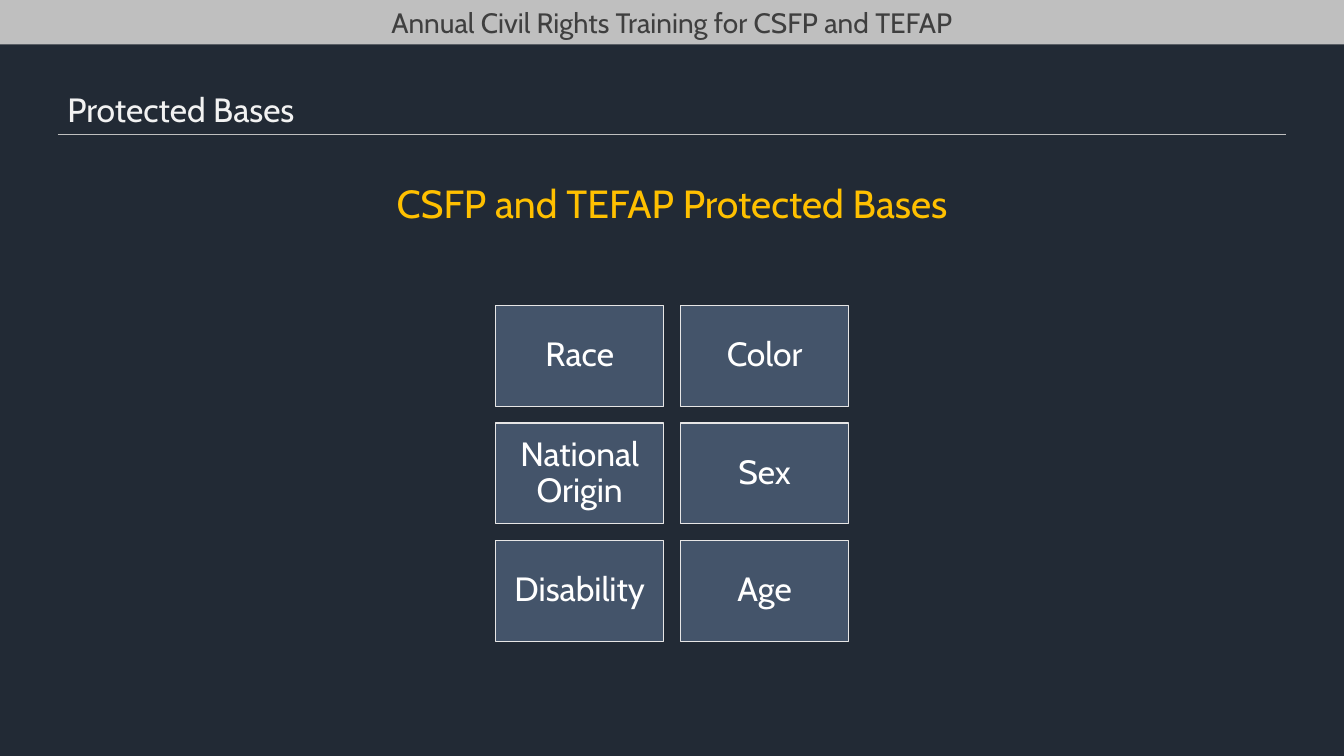
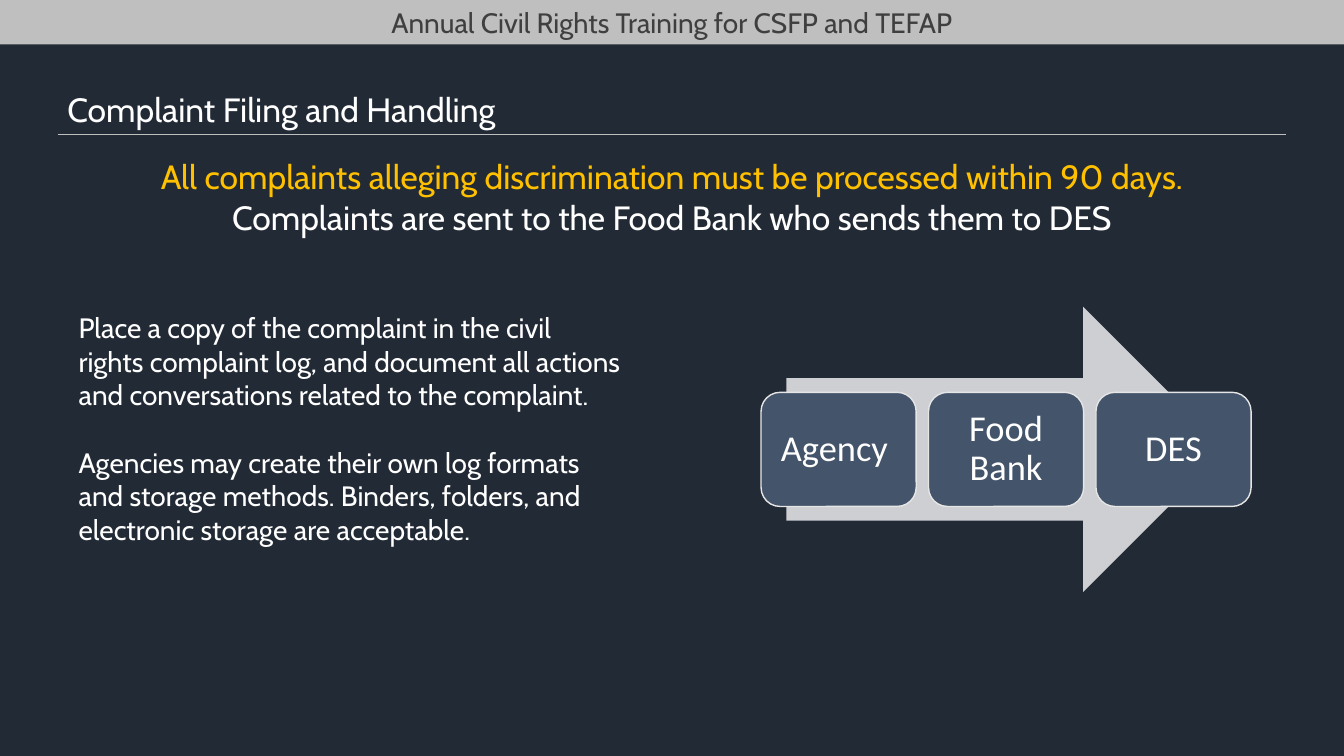
"""Build two training slides on protected bases and complaint handling."""
import pptx
import pptx.dml.color
import pptx.enum.shapes
import pptx.enum.text
import pptx.oxml
import pptx.util

Cm = pptx.util.Cm
Pt = pptx.util.Pt
RGBColor = pptx.dml.color.RGBColor
Shape = pptx.enum.shapes.MSO_SHAPE
Align = pptx.enum.text.PP_ALIGN
Anchor = pptx.enum.text.MSO_ANCHOR

NAVY = RGBColor(0x22, 0x2A, 0x35)
SLATE = RGBColor(0x44, 0x54, 0x6A)
SILVER = RGBColor(0xBF, 0xBF, 0xBF)
MIST = RGBColor(0xCD, 0xCF, 0xD3)
PEARL = RGBColor(0xE7, 0xE6, 0xE6)
CHARCOAL = RGBColor(0x3F, 0x3F, 0x3F)
GOLD = RGBColor(0xFF, 0xC0, 0x00)
WHITE = RGBColor(0xFF, 0xFF, 0xFF)
OFF_WHITE = RGBColor(0xF2, 0xF2, 0xF2)

SLIDE_WIDTH, SLIDE_HEIGHT = 33.87, 19.05
MARGIN = 1.45
CONTENT_WIDTH = SLIDE_WIDTH - 2 * MARGIN
COURSE = "Annual Civil Rights Training for CSFP and TEFAP"
FONT = "Cabin"


def apply(target, formats):
    """Set each attribute named in a dict of format values."""
    for name, value in formats.items():
        setattr(target, name, value)


def place(shape, box):
    """Move a shape to a box given as left, top, width, height in cm."""
    names = ("left", "top", "width", "height")
    apply(shape, {name: Cm(length) for name, length in zip(names, box)})


def write(shape, lines, size, align, font=FONT, anchor=Anchor.TOP,
          inset=(0.25, 0.13), spacing=1.0, gap=0):
    """Fill a shape with one paragraph for each pair of text and colour."""
    frame = shape.text_frame
    across, down = map(Cm, inset)
    apply(frame, {
        "word_wrap": True, "auto_size": pptx.enum.text.MSO_AUTO_SIZE.NONE,
        "vertical_anchor": anchor, "margin_left": across,
        "margin_right": across, "margin_top": down, "margin_bottom": down,
    })
    for index, (text, color) in enumerate(lines):
        para = frame.add_paragraph() if index else frame.paragraphs[0]
        apply(para, {"alignment": align, "line_spacing": spacing,
                     "space_before": Pt(gap if index else 0)})
        span = para.add_run()
        span.text = text
        apply(span.font, {"name": font, "size": Pt(size)})
        span.font.color.rgb = color


def add_block(page, kind, box, fill, line=None):
    """Add a flat preset shape with an optional outline."""
    block = page.shapes.add_shape(kind, *map(Cm, box))
    block.shadow.inherit = False
    block.fill.solid()
    block.fill.fore_color.rgb = fill
    if line is None:
        block.line.fill.background()
    else:
        block.line.color.rgb = line
        block.line.width = Pt(1)
    return block


def add_page(deck, layout, title, color):
    """Add a slide with the course band, its title and the rule below."""
    page = deck.slides.add_slide(deck.slide_layouts.get_by_name(layout))
    band = add_block(page, Shape.RECTANGLE, (0, 0, SLIDE_WIDTH, 1.12), SILVER)
    write(band, [(COURSE, CHARCOAL)], 20, Align.CENTER, anchor=Anchor.MIDDLE)
    place(page.shapes.title, (MARGIN, 2.11, CONTENT_WIDTH, 1.28))
    write(page.shapes.title, [(title, color)], 24, Align.LEFT)
    rule = page.shapes.add_connector(
        pptx.enum.shapes.MSO_CONNECTOR.STRAIGHT,
        Cm(MARGIN), Cm(3.4), Cm(SLIDE_WIDTH - MARGIN), Cm(3.4))
    rule.line.color.rgb = SILVER
    rule.line.width = Pt(0.75)
    pptx.oxml.ns
    properties = rule._element.spPr
    properties.append(pptx.oxml.parse_xml(
        '<a:effectLst xmlns:a='
        '"http://schemas.openxmlformats.org/drawingml/2006/main"/>'))
    return page


def add_headline(page, box, lines, size):
    """Add the centred statement under the title."""
    headline = page.shapes.add_textbox(*map(Cm, box))
    write(headline, lines, size, Align.CENTER)


def add_body(page, box, texts):
    """Fill the body placeholder with unbulleted paragraphs."""
    body = page.placeholders[1]
    place(body, box)
    write(body, [(text, WHITE) for text in texts], 20, Align.LEFT, gap=24)
    for para in body.text_frame.paragraphs:
        properties = para._p.get_or_add_pPr()
        properties.set("marL", "0")
        properties.set("indent", "0")
        properties.append(pptx.oxml.parse_xml(
            '<a:buNone xmlns:a='
            '"http://schemas.openxmlformats.org/drawingml/2006/main"/>'))


def add_tile_grid(page, box, names, columns=2, gap=0.42):
    """Lay out equal labelled tiles row by row in a box."""
    left, top, width, height = box
    rows = -(-len(names) // columns)
    tile_width = (width - gap * (columns - 1)) / columns
    tile_height = (height - gap * (rows - 1)) / rows
    for index, name in enumerate(names):
        row, column = divmod(index, columns)
        tile = add_block(page, Shape.RECTANGLE, (
            left + column * (tile_width + gap), top + row * (tile_height + gap),
            tile_width, tile_height), SLATE, PEARL)
        write(tile, [(name, WHITE)], 24, Align.CENTER, anchor=Anchor.MIDDLE,
              inset=(0.25, 0.25), spacing=0.9)


def add_arrow_process(page, box, steps, gap=0.31):
    """Lay out rounded steps in a row over a wide arrow."""
    left, top, width, height = box
    overhang = 0.64
    add_block(page, Shape.RIGHT_ARROW,
              (left + overhang, top, width - 2 * overhang, height), MIST)
    step_width = (width - gap * (len(steps) - 1)) / len(steps)
    for index, name in enumerate(steps):
        step = add_block(page, Shape.ROUNDED_RECTANGLE, (
            left + index * (step_width + gap), top + 0.3 * height,
            step_width, 0.4 * height), SLATE, PEARL)
        write(step, [(name, WHITE)], 26, Align.CENTER, font="Calibri",
              anchor=Anchor.MIDDLE, inset=(0.28, 0.28), spacing=0.9)


def add_bases_page(deck):
    """Build the slide that names the protected bases."""
    page = add_page(deck, "Title Only", "Protected Bases", OFF_WHITE)
    add_headline(page, (7.29, 4.39, 19.28, 3.33),
                 [("CSFP and TEFAP Protected Bases", GOLD)], 28)
    add_tile_grid(page, (12.49, 7.7, 8.9, 8.46), [
        "Race", "Color", "National Origin", "Sex", "Disability", "Age"])


def add_complaint_page(deck):
    """Build the slide on how complaints are filed and passed on."""
    page = add_page(deck, "Title and Content",
                    "Complaint Filing and Handling", WHITE)
    add_headline(page, (MARGIN, 3.81, CONTENT_WIDTH, 2.31), [
        ("All complaints alleging discrimination must be processed "
         "within 90 days.", GOLD),
        ("Complaints are sent to the Food Bank who sends them to DES", WHITE),
    ], 24)
    add_body(page, (1.73, 7.7, 14.2, 7.09), [
        "Place a copy of the complaint in the civil rights complaint log, "
        "and document all actions and conversations related to the complaint.",
        "Agencies may create their own log formats and storage methods. "
        "Binders, folders, and electronic storage are acceptable.",
    ])
    add_arrow_process(page, (19.18, 7.73, 12.35, 7.19),
                      ["Agency ", "Food Bank", "DES"])


def main():
    """Build and save the deck."""
    deck = pptx.Presentation()
    apply(deck, {"slide_width": Cm(SLIDE_WIDTH),
                 "slide_height": Cm(SLIDE_HEIGHT)})
    background = deck.slide_master.background.fill
    background.solid()
    background.fore_color.rgb = NAVY
    add_bases_page(deck)
    add_complaint_page(deck)
    deck.save("out.pptx")


if __name__ == "__main__":
    main()
